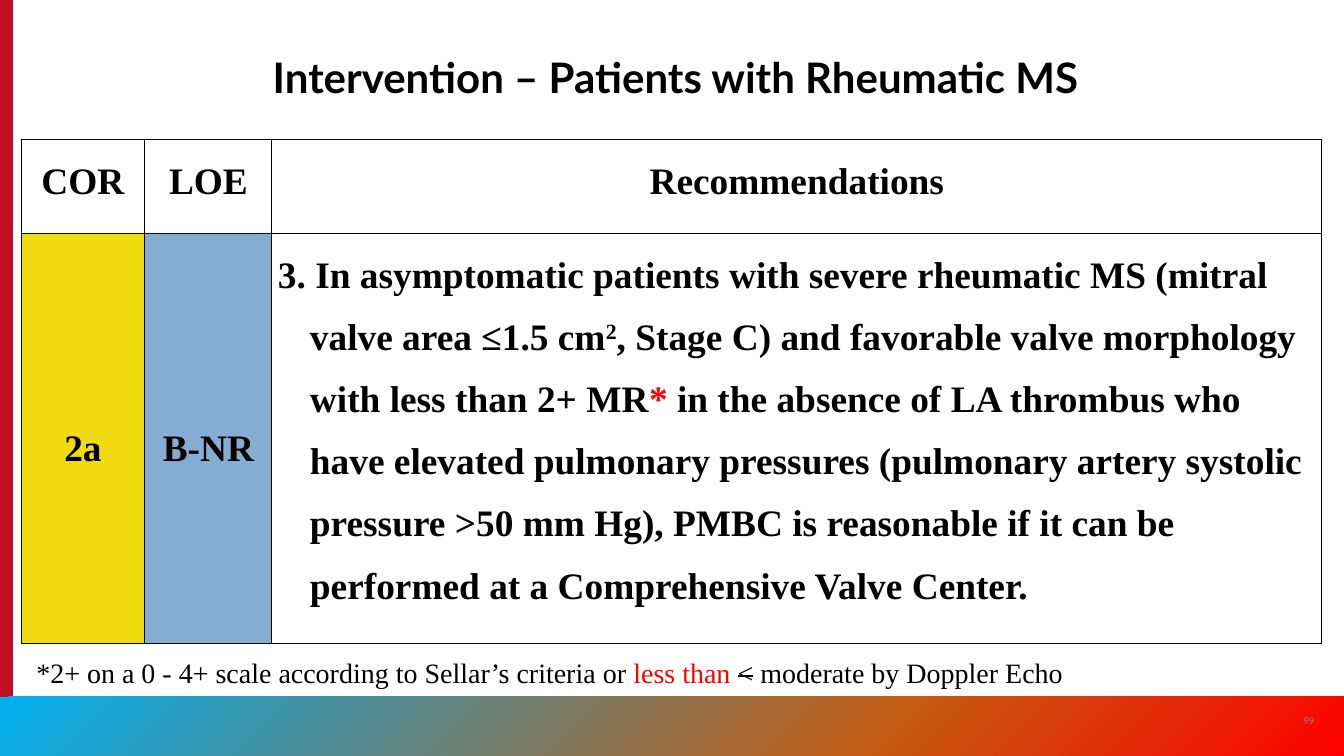
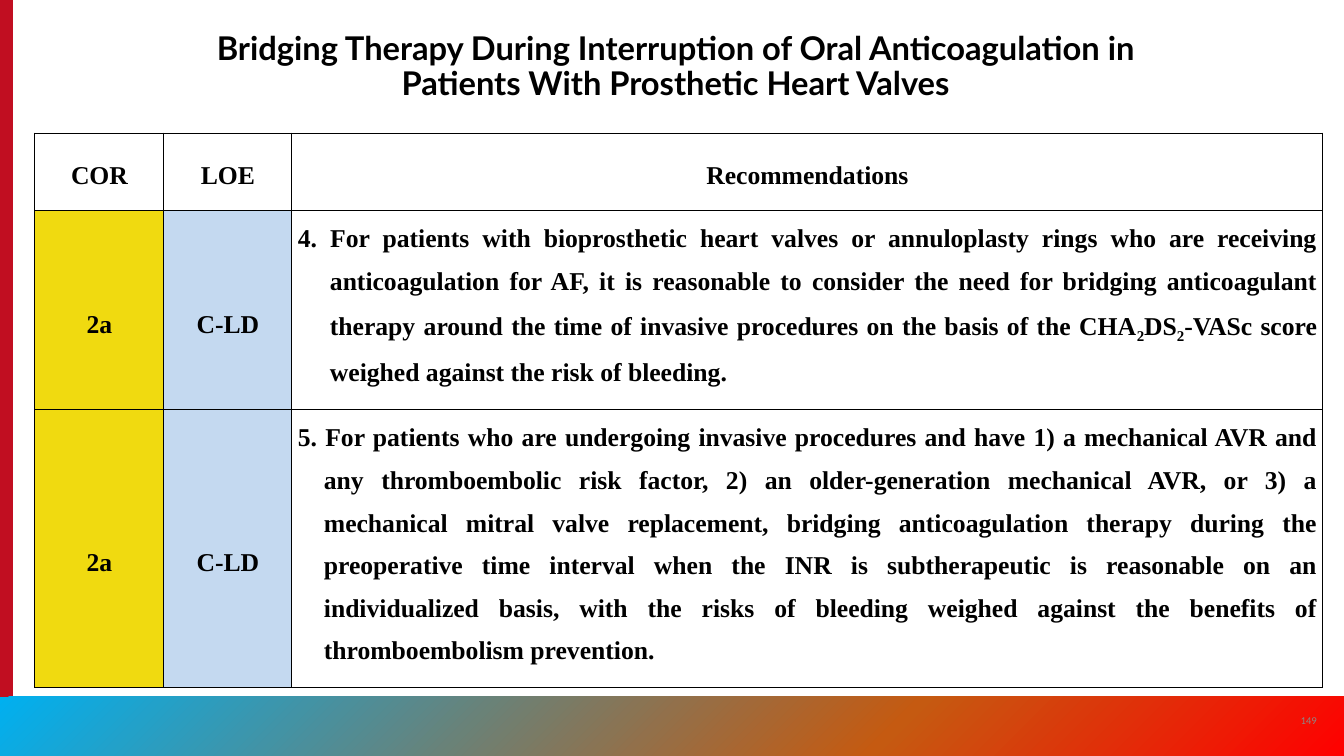
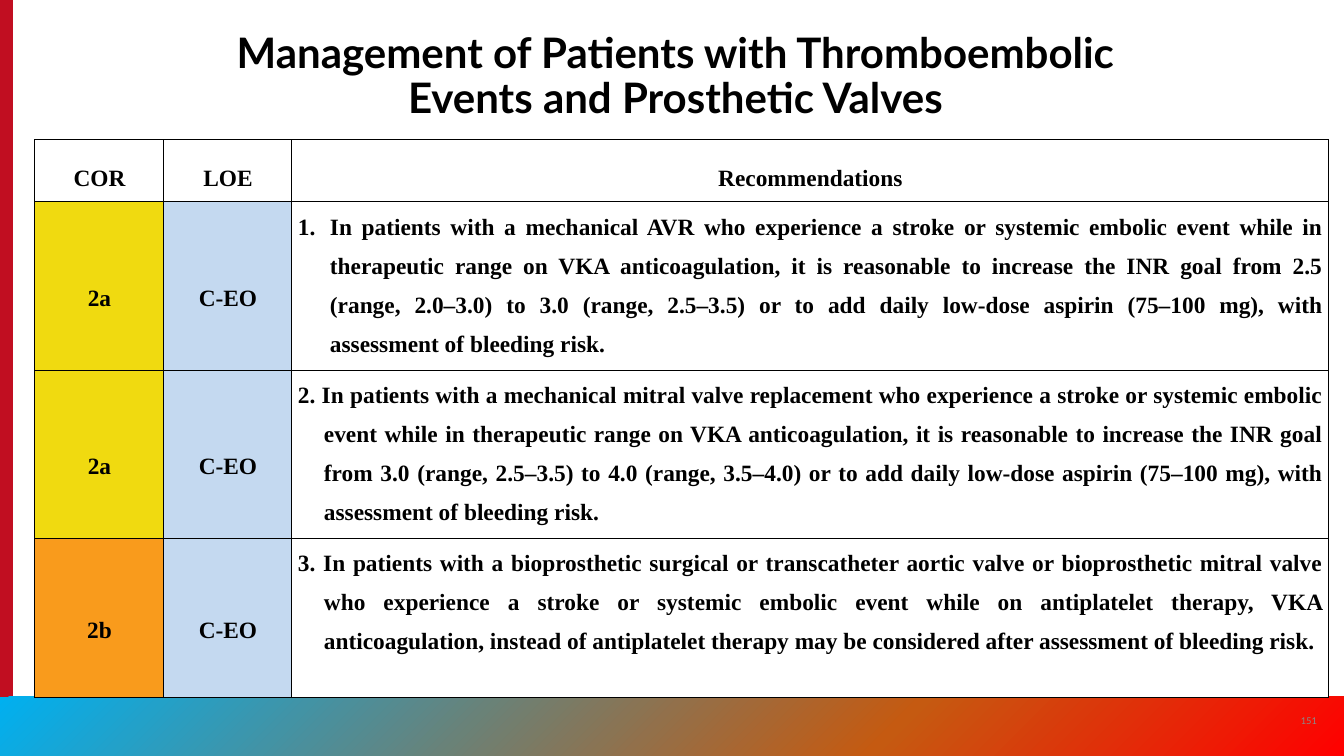
from copy import deepcopy

from lxml.etree import SubElement
from pptx import Presentation
from pptx.dml.color import RGBColor
from pptx.enum.shapes import MSO_SHAPE
from pptx.enum.text import MSO_ANCHOR, PP_ALIGN
from pptx.oxml.ns import qn
from pptx.util import Emu, Pt

EMU_PER_PX = 914400 / 84
WIDTH, HEIGHT = 1344, 756
TITLE_FONT, BODY_FONT = "Lato", "Times New Roman"
BLACK, WHITE, RED, GRAY = "000000", "FFFFFF", "FF0000", "8A8B8A"
STRIP_COLOR = "C10E21"
BAND_STOPS = [(0, "00B0F0"), (0.66, "C55A11"), (1, RED)]
CLASS_COLORS = {"2a": "F0DA10", "2b": "F99B1C"}
LEVEL_COLORS = {"B-NR": "85ADD1", "C-LD": "C4D9F0", "C-EO": "C4D9F0"}
HEADERS = ["COR", "LOE", "Recommendations"]
SUPERSCRIPT = {"baseline": "30000"}
SUBSCRIPT = {"baseline": "-25000"}
STRIKE = {"strike": "sngStrike"}

SLIDES = [
    {
        "title": "Intervention – Patients with Rheumatic MS",
        "title_box": (189, 35, 973, 72),
        "title_size": 36,
        "number": "99",
        "table_at": (21, 140),
        "columns": [124, 127, 1050],
        "heights": [94, 410],
        "size": 32,
        "label_spacing": 1.5,
        "align": PP_ALIGN.LEFT,
        "rows": [
            {"class": "2a", "level": "B-NR", "indent": 32, "runs": [
                ("3. In asymptomatic patients with severe rheumatic MS (mitral valve area ≤1.5 cm",),
                ("2", BLACK, SUPERSCRIPT),
                (", Stage C) and favorable valve morphology with less than 2+ MR",),
                ("*", RED),
                (" in the absence of LA thrombus who have elevated pulmonary pressures "
                 "(pulmonary artery systolic pressure >50 mm Hg), PMBC is reasonable if it can be "
                 "performed at a Comprehensive Valve Center.",),
            ]},
        ],
        "footnote": [
            ("*2+ on a 0 - 4+ scale according to Sellar’s criteria or ",),
            ("less than ", RED),
            ("<", BLACK, STRIKE),
            (" moderate by Doppler Echo",),
        ],
    },
    {
        "title": "Bridging Therapy During Interruption of Oral Anticoagulation in "
                 "Patients With Prosthetic Heart Valves",
        "title_box": (189, 35, 973, 72),
        "title_size": 28,
        "number": "149",
        "table_at": (35, 133),
        "columns": [129, 128, 1031],
        "heights": [78, 199, 268],
        "size": 22,
        "label_spacing": 2.0,
        "align": PP_ALIGN.JUSTIFY,
        "rows": [
            {"class": "2a", "level": "C-LD", "indent": 32, "runs": [
                ("4. For patients with bioprosthetic heart valves or annuloplasty rings who are "
                 "receiving anticoagulation for AF, it is reasonable to consider the need for "
                 "bridging anticoagulant therapy around the time of invasive procedures on the "
                 "basis of the CHA",),
                ("2", BLACK, SUBSCRIPT),
                ("DS",),
                ("2", BLACK, SUBSCRIPT),
                ("-VASc score weighed against the risk of bleeding.",),
            ]},
            {"class": "2a", "level": "C-LD", "indent": 26, "runs": [
                ("5. For patients who are undergoing invasive procedures and have 1) a mechanical "
                 "AVR and any thromboembolic risk factor, 2) an older-generation mechanical AVR, "
                 "or 3) a mechanical mitral valve replacement, bridging anticoagulation therapy "
                 "during the preoperative time interval when the INR is subtherapeutic is "
                 "reasonable on an individualized basis, with the risks of bleeding weighed "
                 "against the benefits of thromboembolism prevention.",),
            ]},
        ],
    },
    {
        "title": "Management of Patients with Thromboembolic Events and Prosthetic Valves",
        "title_box": (189, 14, 973, 113),
        "title_size": 36,
        "number": "151",
        "table_at": (35, 140),
        "columns": [129, 128, 1037],
        "heights": [62, 159, 159, 159],
        "size": 20,
        "label_spacing": 2.0,
        "align": PP_ALIGN.JUSTIFY,
        "rows": [
            {"class": "2a", "level": "C-EO", "indent": 32, "numbered": True, "runs": [
                ("In patients with a mechanical AVR who experience a stroke or systemic embolic "
                 "event while in therapeutic range on VKA anticoagulation, it is reasonable to "
                 "increase the INR goal from 2.5 (range, 2.0–3.0) to 3.0 (range, 2.5–3.5) or to "
                 "add daily low-dose aspirin (75–100 mg), with assessment of bleeding risk.",),
            ]},
            {"class": "2a", "level": "C-EO", "indent": 26, "runs": [
                ("2. In patients with a mechanical mitral valve replacement who experience a "
                 "stroke or systemic embolic event while in therapeutic range on VKA "
                 "anticoagulation, it is reasonable to increase the INR goal from 3.0 (range, "
                 "2.5–3.5) to 4.0 (range, 3.5–4.0) or to add daily low-dose aspirin (75–100 mg), "
                 "with assessment of bleeding risk.",),
            ]},
            {"class": "2b", "level": "C-EO", "indent": 26, "runs": [
                ("3. In patients with a bioprosthetic surgical or transcatheter aortic valve or "
                 "bioprosthetic mitral valve who experience a stroke or systemic embolic event "
                 "while on antiplatelet therapy, VKA anticoagulation, instead of antiplatelet "
                 "therapy may be considered after assessment of bleeding risk.",),
            ]},
        ],
    },
]


def px(length):
    return Emu(round(length * EMU_PER_PX))


def color(value):
    return RGBColor.from_string(value)


def write(paragraph, runs, font_name, size, bold=False, align=PP_ALIGN.CENTER, spacing=1.0):
    paragraph.alignment = align
    paragraph.line_spacing = spacing
    for text, tint, attributes in ((*run, BLACK, {})[:3] if len(run) == 1
                                   else (*run, {})[:3] for run in runs):
        run = paragraph.add_run()
        run.text = text
        run.font.name = font_name
        run.font.size = Pt(size)
        run.font.bold = bold
        run.font.color.rgb = color(tint)
        for name, value in attributes.items():
            run.font._element.set(name, value)


def add_text(slide, box, anchor, runs, *style, **options):
    frame = slide.shapes.add_textbox(*map(px, box)).text_frame
    frame.word_wrap = True
    frame.vertical_anchor = anchor
    write(frame.paragraphs[0], runs, *style, **options)


def add_bar(slide, *box):
    bar = slide.shapes.add_shape(MSO_SHAPE.RECTANGLE, *map(px, box))
    bar.shadow.inherit = False
    bar.line.fill.background()
    return bar


def add_frame(slide, number):
    strip = add_bar(slide, 0, 0, 13, HEIGHT)
    strip.fill.solid()
    strip.fill.fore_color.rgb = color(STRIP_COLOR)

    band = add_bar(slide, 0, 697, WIDTH, 59)
    band.fill.gradient()
    band.fill.gradient_angle = 315
    stop_list = band._element.spPr.find(qn("a:gradFill")).find(qn("a:gsLst"))
    stop_list.append(deepcopy(stop_list[0]))
    for stop, (position, tint) in zip(band.fill.gradient_stops, BAND_STOPS):
        stop.position = position
        stop.color.rgb = color(tint)

    add_text(slide, (1289, 701, 40, 40), MSO_ANCHOR.MIDDLE, [(number, GRAY)], TITLE_FONT, 8)


def style_cell(cell, fill, anchor):
    cell.margin_left = cell.margin_right = px(6)
    cell.margin_top = cell.margin_bottom = 0
    cell.vertical_anchor = anchor
    properties = cell._tc.get_or_add_tcPr()
    for side in ("a:lnL", "a:lnR", "a:lnT", "a:lnB"):
        border = SubElement(properties, qn(side), w=str(Pt(1)))
        SubElement(SubElement(border, qn("a:solidFill")), qn("a:srgbClr"), val=BLACK)
    cell.fill.solid()
    cell.fill.fore_color.rgb = color(fill)


def indent(paragraph, length, numbered):
    properties = paragraph._p.get_or_add_pPr()
    properties.set("marL", str(px(length)))
    properties.set("indent", str(-px(length)))
    if numbered:
        SubElement(properties, qn("a:buFont"), typeface="+mj-lt")
        SubElement(properties, qn("a:buAutoNum"), type="arabicPeriod")


def add_recommendations(slide, content):
    columns, heights = content["columns"], content["heights"]
    box = (*content["table_at"], sum(columns), sum(heights))
    table = slide.shapes.add_table(len(heights), len(columns), *map(px, box)).table
    table.first_row = table.horz_banding = False
    for column, width in zip(table.columns, columns):
        column.width = px(width)
    for row, height in zip(table.rows, heights):
        row.height = px(height)

    def label(cell, text, fill, anchor):
        style_cell(cell, fill, anchor)
        write(cell.text_frame.paragraphs[0], [(text,)], BODY_FONT, content["size"],
              bold=True, spacing=content["label_spacing"])

    for index, header in enumerate(HEADERS):
        label(table.cell(0, index), header, WHITE, MSO_ANCHOR.TOP)
    for index, row in enumerate(content["rows"], start=1):
        label(table.cell(index, 0), row["class"], CLASS_COLORS[row["class"]], MSO_ANCHOR.MIDDLE)
        label(table.cell(index, 1), row["level"], LEVEL_COLORS[row["level"]], MSO_ANCHOR.MIDDLE)
        advice = table.cell(index, 2)
        style_cell(advice, WHITE, MSO_ANCHOR.TOP)
        paragraph = advice.text_frame.paragraphs[0]
        indent(paragraph, row["indent"], row.get("numbered", False))
        write(paragraph, row["runs"], BODY_FONT, content["size"], bold=True,
              align=content["align"], spacing=1.5)


def main():
    presentation = Presentation()
    presentation.slide_width, presentation.slide_height = px(WIDTH), px(HEIGHT)
    for content in SLIDES:
        slide = presentation.slides.add_slide(presentation.slide_layouts[6])
        add_frame(slide, content["number"])
        add_text(slide, content["title_box"], MSO_ANCHOR.BOTTOM, [(content["title"],)],
                 TITLE_FONT, content["title_size"], bold=True, spacing=0.9)
        add_recommendations(slide, content)
        if "footnote" in content:
            add_text(slide, (28, 651, 1071, 42), MSO_ANCHOR.MIDDLE, content["footnote"],
                     BODY_FONT, 24, align=PP_ALIGN.JUSTIFY)
    presentation.save("out.pptx")


if __name__ == "__main__":
    main()
